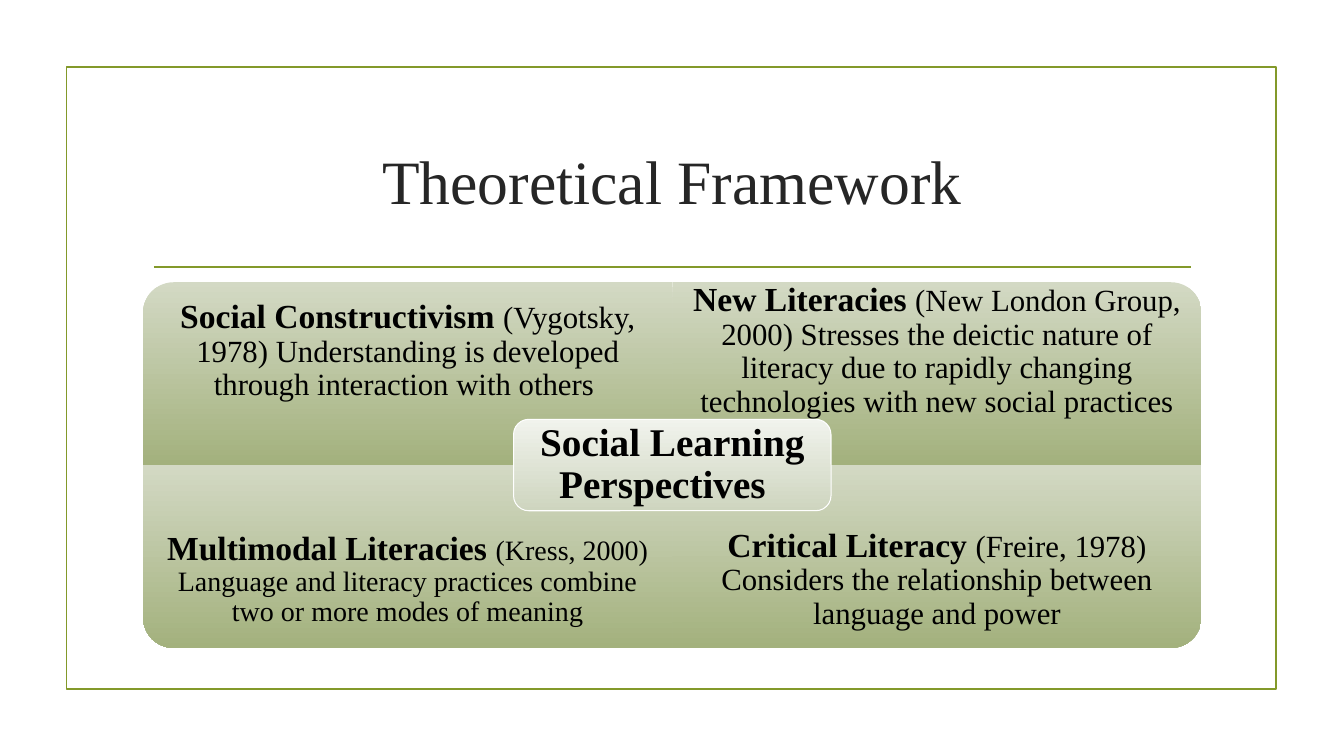
"""Build the Theoretical Framework slide with four quadrants around a hub."""
from dataclasses import dataclass

from pptx import Presentation
from pptx.dml.color import RGBColor
from pptx.enum.shapes import MSO_CONNECTOR, MSO_SHAPE
from pptx.enum.text import MSO_ANCHOR, PP_ALIGN
from pptx.oxml.ns import qn
from pptx.util import Pt

RECTANGLE = MSO_SHAPE.RECTANGLE
ONE_ROUND = MSO_SHAPE.ROUND_1_RECTANGLE
ALL_ROUND = MSO_SHAPE.ROUNDED_RECTANGLE
STRAIGHT = MSO_CONNECTOR.STRAIGHT
MIDDLE = MSO_ANCHOR.MIDDLE
CENTER = PP_ALIGN.CENTER
TITLE_ONLY = 5


@dataclass(frozen=True)
class Theme:
    font: str = "Times New Roman"
    accent: RGBColor = RGBColor(0x83, 0x99, 0x2A)
    title: RGBColor = RGBColor(0x26, 0x26, 0x26)
    text: RGBColor = RGBColor(0, 0, 0)
    hub_edge: RGBColor = RGBColor(0xFF, 0xFF, 0xFF)
    tile_fill: tuple[str, str] = ("D3D9C4", "A3B17D")
    hub_fill: tuple[str, str] = ("F1F3ED", "CED5BF")
    title_size: int = 44
    hub_size: int = 28
    theory_size: int = 24
    border: float = 1.25
    hub_border: float = 0.75


@dataclass(frozen=True)
class Box:
    left: float
    top: float
    width: float
    height: float

    def emu(self) -> tuple[int, int, int, int]:
        return Pt(self.left), Pt(self.top), Pt(self.width), Pt(self.height)


@dataclass(frozen=True)
class Theory:
    column: int
    row: int
    rotation: int
    name: str
    summary: str
    summary_size: int


THEME = Theme()
FRAME = Box(47.6, 48, 864, 444)
TITLE = Box(102.2, 77, 756, 103)
RULE_LEFT, RULE_RIGHT, RULE_TOP = 110, 850.4, 190.8
GRID_LEFT, GRID_TOP = 102.2, 201.6
TILE_WIDTH, TILE_HEIGHT = 378, 130.6
SUMMARY_HEIGHT = TILE_HEIGHT * 0.75
HUB_WIDTH, HUB_HEIGHT = TILE_WIDTH * 0.6, TILE_HEIGHT / 2
HUB_PADDING = 3.2
THEORY_INSET, HUB_INSET = 13.44, 8.4

THEORIES = (
    Theory(0, 0, 270, "Social Constructivism ",
           "(Vygotsky, 1978) Understanding is developed through interaction with others ", 22),
    Theory(1, 0, 0, "New Literacies ",
           "(New London Group, 2000) Stresses the deictic nature of literacy due to "
           "rapidly changing technologies with new social practices", 22),
    Theory(0, 1, 180, "Multimodal Literacies ",
           "(Kress, 2000) Language and literacy practices combine two or more modes of meaning", 20),
    Theory(1, 1, 90, "Critical Literacy ",
           "(Freire, 1978) Considers the relationship between language and power", 22),
)


def fill_downward(shape, colours: tuple[str, str]) -> None:
    shape.shadow.inherit = False
    shape.fill.gradient()
    shape.fill.gradient_angle = 270
    for stop, colour in zip(shape.fill.gradient_stops, colours):
        stop.color.rgb = RGBColor.from_string(colour)
    shape._element.spPr.find(qn("a:gradFill")).set("rotWithShape", "0")


def add_label(slide, box: Box, inset: float):
    label = slide.shapes.add_textbox(*box.emu())
    frame = label.text_frame
    frame.word_wrap = True
    frame.vertical_anchor = MIDDLE
    frame.margin_left = frame.margin_right = Pt(inset)
    frame.margin_top = frame.margin_bottom = Pt(inset)
    paragraph = frame.paragraphs[0]
    paragraph.alignment = CENTER
    paragraph.line_spacing = 0.9
    paragraph.font.name = THEME.font
    paragraph.font.color.rgb = THEME.text
    return paragraph


def add_run(paragraph, text: str, size: int, bold: bool) -> None:
    run = paragraph.add_run()
    run.text = text
    run.font.size = Pt(size)
    run.font.bold = bold


def add_theory(slide, theory: Theory) -> None:
    left = GRID_LEFT + theory.column * TILE_WIDTH
    top = GRID_TOP + theory.row * TILE_HEIGHT
    width, height = TILE_WIDTH, TILE_HEIGHT
    if theory.rotation % 180:
        width, height = height, width
    unrotated = Box(left + (TILE_WIDTH - width) / 2, top + (TILE_HEIGHT - height) / 2, width, height)
    tile = slide.shapes.add_shape(ONE_ROUND, *unrotated.emu())
    tile.rotation = theory.rotation
    fill_downward(tile, THEME.tile_fill)
    tile.line.fill.background()

    text_top = top + theory.row * (TILE_HEIGHT - SUMMARY_HEIGHT)
    paragraph = add_label(slide, Box(left, text_top, TILE_WIDTH, SUMMARY_HEIGHT), THEORY_INSET)
    add_run(paragraph, theory.name, THEME.theory_size, True)
    add_run(paragraph, theory.summary, theory.summary_size, False)


def add_hub(slide) -> None:
    left = GRID_LEFT + TILE_WIDTH - HUB_WIDTH / 2
    top = GRID_TOP + TILE_HEIGHT - HUB_HEIGHT / 2
    hub = slide.shapes.add_shape(ALL_ROUND, *Box(left, top, HUB_WIDTH, HUB_HEIGHT).emu())
    fill_downward(hub, THEME.hub_fill)
    hub.line.color.rgb = THEME.hub_edge
    hub.line.width = Pt(THEME.hub_border)
    inner = Box(left + HUB_PADDING, top + HUB_PADDING,
                HUB_WIDTH - 2 * HUB_PADDING, HUB_HEIGHT - 2 * HUB_PADDING)
    paragraph = add_label(slide, inner, HUB_INSET)
    add_run(paragraph, "Social Learning Perspectives  ", THEME.hub_size, True)


def add_border(slide) -> None:
    frame = slide.shapes.add_shape(RECTANGLE, *FRAME.emu())
    frame.shadow.inherit = False
    frame.fill.background()
    rule = slide.shapes.add_connector(
        STRAIGHT, Pt(RULE_LEFT), Pt(RULE_TOP), Pt(RULE_RIGHT), Pt(RULE_TOP))
    properties = rule._element.spPr
    for outline in (frame.line, rule.line):
        outline.color.rgb = THEME.accent
        outline.width = Pt(THEME.border)
    properties.append(properties.makeelement(qn("a:effectLst"), {}))


def format_title(slide) -> None:
    title = slide.shapes.title
    title.left, title.top, title.width, title.height = TITLE.emu()
    title.text_frame.text = "Theoretical Framework"
    title.text_frame.vertical_anchor = MIDDLE
    paragraph = title.text_frame.paragraphs[0]
    paragraph.alignment = CENTER
    paragraph.font.name = THEME.font
    paragraph.font.size = Pt(THEME.title_size)
    paragraph.font.color.rgb = THEME.title


def main() -> None:
    presentation = Presentation()
    presentation.slide_width, presentation.slide_height = Pt(960), Pt(540)
    slide = presentation.slides.add_slide(presentation.slide_layouts[TITLE_ONLY])
    add_border(slide)
    format_title(slide)
    for theory in THEORIES:
        add_theory(slide, theory)
    add_hub(slide)
    presentation.save("out.pptx")


if __name__ == "__main__":
    main()
